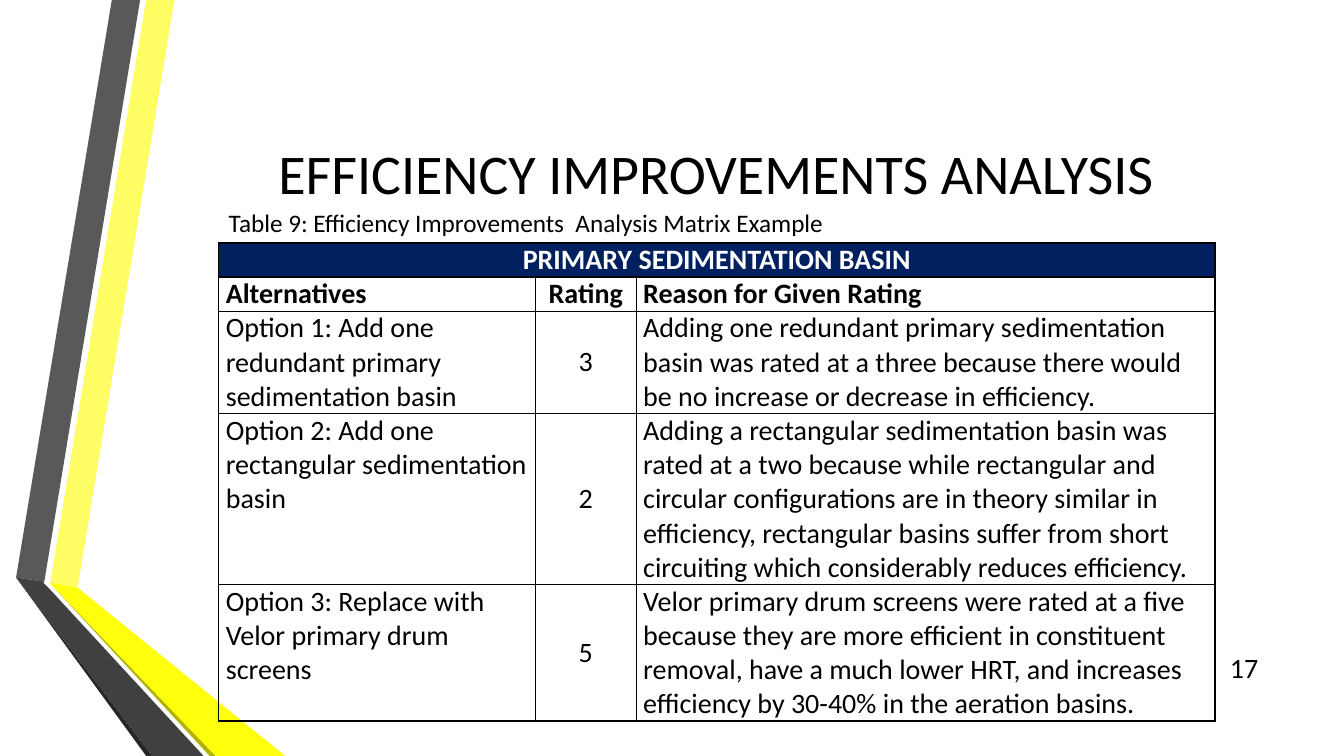
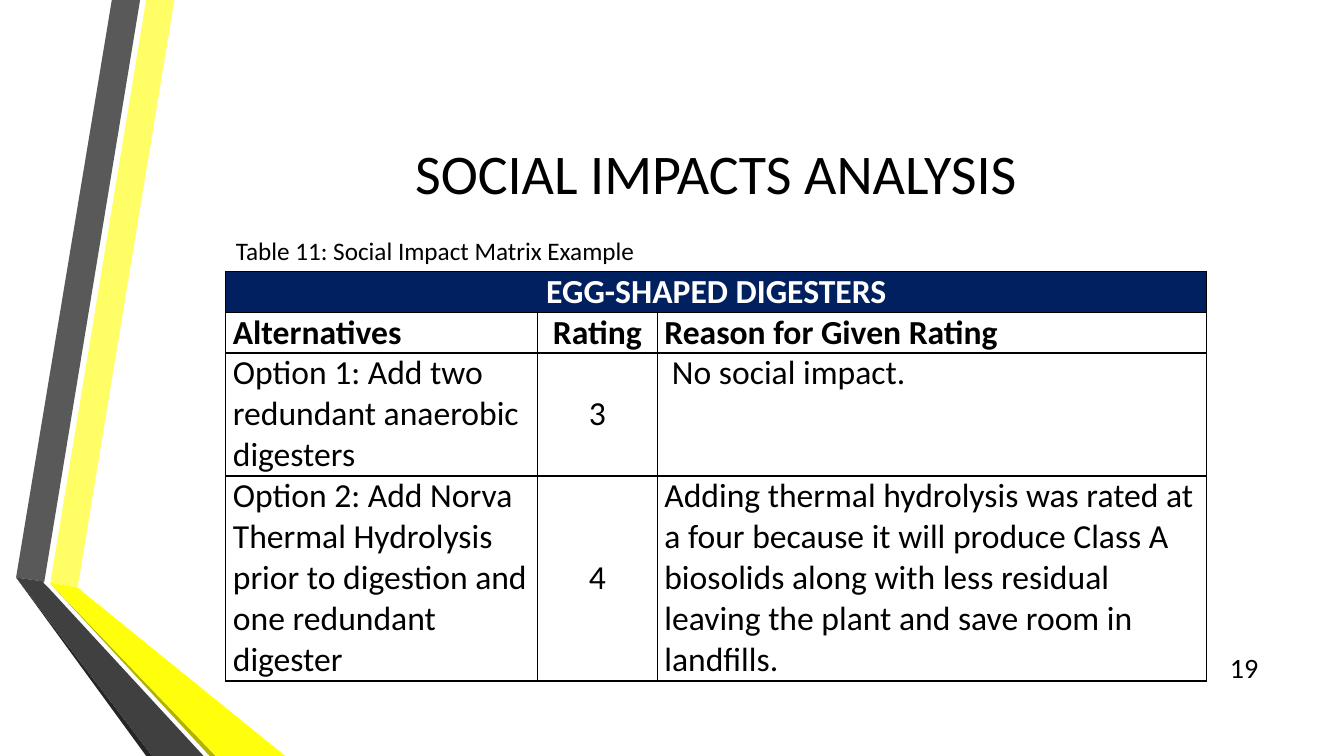
from lxml import etree
from pptx import Presentation
from pptx.dml.color import RGBColor
from pptx.enum.text import MSO_ANCHOR, PP_ALIGN
from pptx.oxml.ns import qn
from pptx.util import Inches, Pt

LEFT, CENTER, RIGHT = PP_ALIGN.LEFT, PP_ALIGN.CENTER, PP_ALIGN.RIGHT
TOP, MIDDLE = MSO_ANCHOR.TOP, MSO_ANCHOR.MIDDLE

FONT = "Calibri"
BLACK, WHITE, NAVY = "000000", "FFFFFF", "002060"
LINE_SPACING = 1.22
CAPTION_HEIGHT = 0.4
HEADINGS = ("Alternatives", "Rating", "Reason for Given Rating")
COLUMN_FORMATS = ((LEFT, TOP), (CENTER, MIDDLE), (LEFT, TOP))

RIBBONS = [
    ("FFFF65", [(0.5, 5.78), (0.77, 5.83), (1.73, 0), (1.45, 0)]),
    ("595959", [(1.39, 0), (1.11, 0), (0.16, 5.73), (0.44, 5.77)]),
    ("262626", [(0.16, 5.73), (1.45, 7.5), (1.51, 7.5)]),
    ("B2B200", [(0.5, 5.79), (2.08, 7.5), (2.14, 7.5)]),
    ("FFFF0C", [(0.5, 5.79), (2.14, 7.5), (2.83, 7.5), (0.77, 5.83), (0.5, 5.78)]),
    ("404040", [(2.02, 7.5), (0.48, 5.83), (0.43, 5.78), (0.44, 5.77),
                (0.16, 5.73), (1.51, 7.5)]),
]

SLIDES = [
    {
        "title": "EFFICIENCY IMPROVEMENTS ANALYSIS",
        "number": "17",
        "caption": "Table 9: Efficiency Improvements  Analysis Matrix Example",
        "subject": "PRIMARY SEDIMENTATION BASIN",
        "left": 2.17, "top": 2.41, "size": 20,
        "widths": (3.14, 1, 5.74),
        "line_counts": (1, 1, 3, 5, 4),
        "options": [
            ("Option 1: Add one redundant primary sedimentation basin", "3",
             "Adding one redundant primary sedimentation basin was rated at a three "
             "because there would be no increase or decrease in efficiency."),
            ("Option 2: Add one rectangular sedimentation basin", "2",
             "Adding a rectangular sedimentation basin was rated at a two because while "
             "rectangular and circular configurations are in theory similar in efficiency, "
             "rectangular basins suffer from short circuiting which considerably reduces "
             "efficiency."),
            ("Option 3: Replace with Velor primary drum screens", "5",
             "Velor primary drum screens were rated at a five because they are more "
             "efficient in constituent removal, have a much lower HRT, and increases "
             "efficiency by 30-40% in the aeration basins."),
        ],
    },
    {
        "title": "SOCIAL IMPACTS ANALYSIS",
        "number": "19",
        "caption": "Table 11: Social Impact Matrix Example",
        "subject": "EGG-SHAPED DIGESTERS",
        "left": 2.24, "top": 2.69, "size": 24,
        "widths": (3.09, 1.19, 5.45),
        "line_counts": (1, 1, 3, 5),
        "options": [
            ("Option 1: Add two redundant anaerobic digesters", "3", " No social impact."),
            ("Option 2: Add Norva Thermal Hydrolysis prior to digestion and one redundant "
             "digester", "4",
             "Adding thermal hydrolysis was rated at a four because it will produce Class A "
             "biosolids along with less residual leaving the plant and save room in "
             "landfills."),
        ],
    },
]


def color(value):
    """Turn a hex string into a colour."""
    return RGBColor.from_string(value)


def write(frame, text, size=18, ink=BLACK, bold=False, align=LEFT):
    """Write one formatted paragraph into a text frame."""
    para = frame.paragraphs[0]
    para.alignment = align
    span = para.add_run()
    span.text = text
    span.font.name = FONT
    span.font.size = Pt(size)
    span.font.bold = bold
    span.font.color.rgb = color(ink)


def add_borders(cell):
    """Give a table cell a thin black border on every side."""
    properties = cell._tc.get_or_add_tcPr()
    for index, side in enumerate(("lnL", "lnR", "lnT", "lnB")):
        line = etree.Element(qn(f"a:{side}"), w=str(Pt(1)))
        fill = etree.SubElement(line, qn("a:solidFill"))
        etree.SubElement(fill, qn("a:srgbClr"), val=BLACK)
        properties.insert(index, line)


class AnalysisDeck:
    """Hold the shared style and the current page."""

    def __init__(self):
        """Set up the page size and the layout."""
        self.deck = Presentation()
        self.deck.slide_width, self.deck.slide_height = Inches(13.33), Inches(7.5)
        self.layout = self.deck.slide_layouts[5]
        self.page = None

    def add_page(self, title, number):
        """Start a page with ribbons, title and number."""
        self.page = self.deck.slides.add_slide(self.layout)
        heading = self.page.shapes.title
        heading.left, heading.top = Inches(1.62), Inches(0.75)
        heading.width, heading.height = Inches(10.96), Inches(1.92)
        heading.text_frame.vertical_anchor = MIDDLE
        write(heading.text_frame, title, size=40, align=CENTER)
        for fill, points in RIBBONS:
            self.add_ribbon(fill, points)
        self.add_text(number, 11.98, 6.42, 0.6, 0.4, anchor=MIDDLE, size=20, align=RIGHT)

    def add_ribbon(self, fill, points):
        """Draw one closed, filled outline."""
        corners = [(Inches(x), Inches(y)) for x, y in points]
        builder = self.page.shapes.build_freeform(*corners[0])
        builder.add_line_segments(corners[1:], close=True)
        ribbon = builder.convert_to_shape()
        ribbon.shadow.inherit = False
        ribbon.fill.solid()
        ribbon.fill.fore_color.rgb = color(fill)
        ribbon.line.fill.background()

    def add_text(self, text, left, top, width, height, anchor=TOP, **style):
        """Add a wrapping text box."""
        box = self.page.shapes.add_textbox(
            Inches(left), Inches(top), Inches(width), Inches(height))
        box.text_frame.word_wrap = True
        box.text_frame.vertical_anchor = anchor
        write(box.text_frame, text, **style)

    def fill_cell(self, cell, text, fill=None, anchor=TOP, **style):
        """Format a table cell and write its text."""
        cell.margin_left = cell.margin_right = Inches(0.07)
        cell.margin_top = cell.margin_bottom = 0
        cell.vertical_anchor = anchor
        if fill:
            cell.fill.solid()
            cell.fill.fore_color.rgb = color(fill)
        else:
            cell.fill.background()
        write(cell.text_frame, text, **style)

    def add_matrix(self, caption, subject, left, top, size, widths, line_counts, options):
        """Add a captioned rating table whose rows fit their lines of text."""
        self.add_text(caption, left, top - CAPTION_HEIGHT, sum(widths), CAPTION_HEIGHT)
        heights = [Pt(size * LINE_SPACING * count) for count in line_counts]
        table = self.page.shapes.add_table(
            len(heights), len(widths), Inches(left), Inches(top),
            Inches(sum(widths)), sum(heights)).table
        table.first_row = table.horz_banding = False
        for column, width in zip(table.columns, widths):
            column.width = Inches(width)
        for row, height in zip(table.rows, heights):
            row.height = height
        table.cell(0, 0).merge(table.cell(0, len(widths) - 1))
        self.fill_cell(table.cell(0, 0), subject, fill=NAVY, anchor=MIDDLE,
                       size=size, ink=WHITE, bold=True, align=CENTER)
        for row, texts in enumerate([HEADINGS, *options], start=1):
            for column, (text, (align, anchor)) in enumerate(zip(texts, COLUMN_FORMATS)):
                self.fill_cell(table.cell(row, column), text, anchor=anchor,
                               size=size, bold=row == 1, align=align)
        for cell in table.iter_cells():
            add_borders(cell)


def main():
    """Build and save the deck."""
    analysis = AnalysisDeck()
    for content in SLIDES:
        matrix = dict(content)
        analysis.add_page(matrix.pop("title"), matrix.pop("number"))
        analysis.add_matrix(**matrix)
    analysis.deck.save("out.pptx")


if __name__ == "__main__":
    main()
